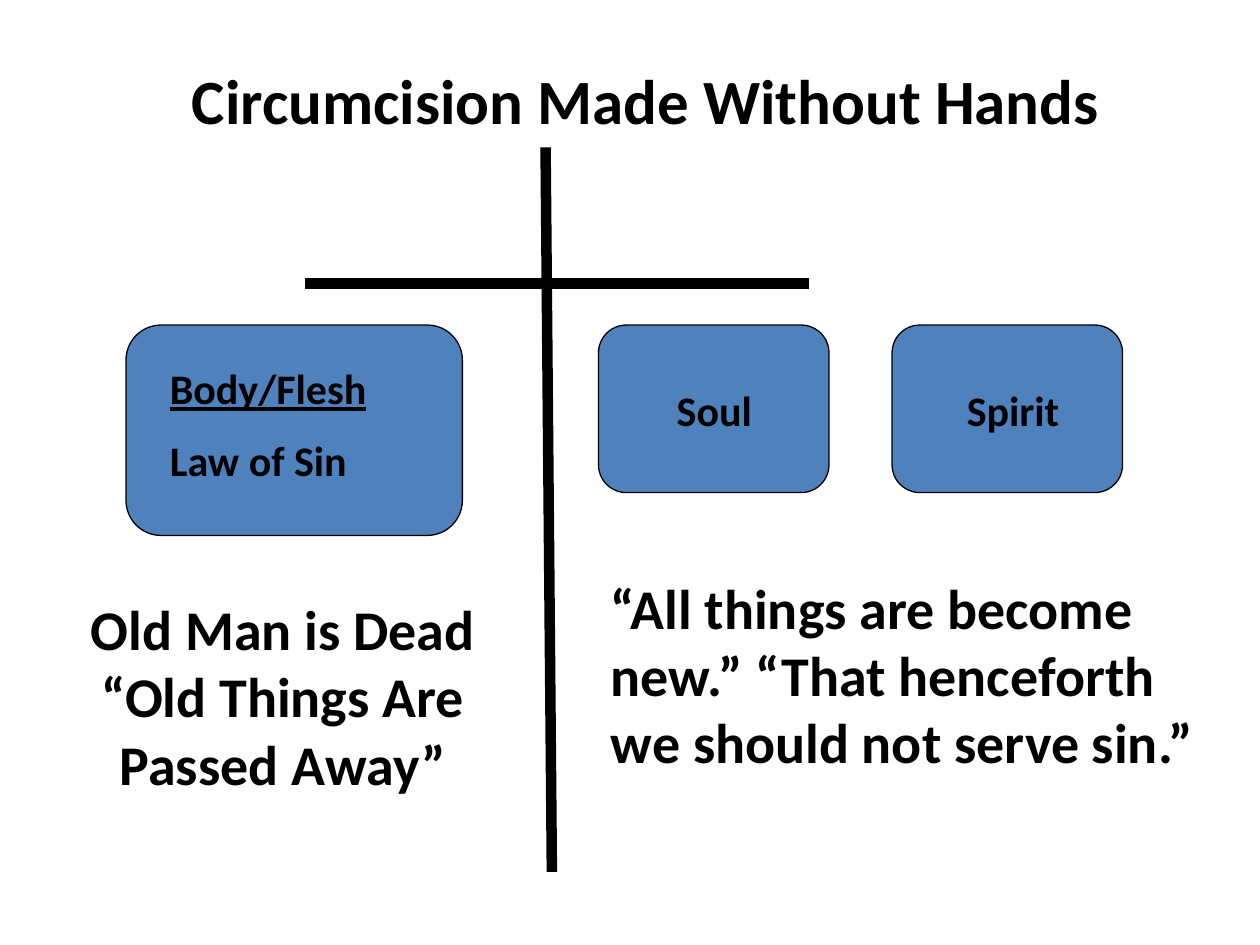
import pptx
import pptx.util
import pptx.dml.color
import pptx.enum.shapes
import pptx.enum.text
from pptx.util import Inches

COLORS = {"ink": "000000", "card": "4F81BD"}
FONT = "Calibri"
LEFT = pptx.enum.text.PP_ALIGN.LEFT
CENTER = pptx.enum.text.PP_ALIGN.CENTER
TOP = pptx.enum.text.MSO_ANCHOR.TOP
MIDDLE = pptx.enum.text.MSO_ANCHOR.MIDDLE


def rgb(name):
    return pptx.dml.color.RGBColor.from_string(COLORS[name])


def add_text(slide, box, lines, size, align=LEFT, anchor=TOP, underline_first=False):
    """Bold text; paragraphs after the first are set half a line apart."""
    frame = slide.shapes.add_textbox(*map(Inches, box)).text_frame
    frame.word_wrap = True
    frame.vertical_anchor = anchor
    frame.text = "\n".join(lines)
    for index, paragraph in enumerate(frame.paragraphs):
        paragraph.alignment = align
        if index:
            paragraph.space_before = pptx.util.Pt(size / 2)
        font = paragraph.runs[0].font
        font.name = FONT
        font.size = pptx.util.Pt(size)
        font.bold = True
        font.underline = underline_first and index == 0
        font.color.rgb = rgb("ink")


def add_card(slide, left, width, height):
    card = slide.shapes.add_shape(
        pptx.enum.shapes.MSO_SHAPE.FLOWCHART_ALTERNATE_PROCESS,
        Inches(left), Inches(2.58), Inches(width), Inches(height))
    card.shadow.inherit = False
    card.fill.solid()
    card.fill.fore_color.rgb = rgb("card")
    card.line.color.rgb = rgb("ink")
    card.line.width = pptx.util.Pt(0.75)


def add_beam(slide, *ends):
    beam = slide.shapes.add_connector(
        pptx.enum.shapes.MSO_CONNECTOR.STRAIGHT, *map(Inches, ends))
    beam.line.color.rgb = rgb("ink")
    beam.line.width = pptx.util.Pt(6)
    properties = beam._element.spPr
    properties.append(properties.makeelement(pptx.oxml.ns.qn("a:effectLst"), {}))


def main():
    deck = pptx.Presentation()
    deck.slide_width, deck.slide_height = Inches(10), Inches(7.5)
    slide = deck.slides.add_slide(deck.slide_layouts[6])

    # Title
    add_text(slide, (0.25, 0.5, 9.75, 0.58), ["Circumcision Made Without Hands"],
             36, CENTER, MIDDLE)

    # Body, left of the cross
    add_card(slide, 1, 2.67, 1.67)
    add_text(slide, (1.25, 2.83, 2.17, 1.1), ["Body/Flesh", "Law of Sin"], 24,
             underline_first=True)

    # Cross
    add_beam(slide, 4.33, 1.17, 4.38, 6.92)
    add_beam(slide, 2.42, 2.25, 6.42, 2.25)

    # Soul and spirit, right of the cross
    for left, label, label_width in ((4.75, "Soul", 1.5), (7.08, "Spirit", 1.58)):
        add_card(slide, left, 1.83, 1.33)
        add_text(slide, (left + 0.17, 3, label_width, 0.5), [label], 24, CENTER)

    # Quotations under each side
    add_text(slide, (4.75, 4.5, 4.83, 1.72),
             ["“All things are become new.” “That henceforth we should not serve sin.”"], 32)
    add_text(slide, (0.33, 4.67, 3.83, 1.72),
             ["Old Man is Dead “Old Things Are Passed Away”"], 32, CENTER)

    deck.save("out.pptx")


if __name__ == "__main__":
    main()
